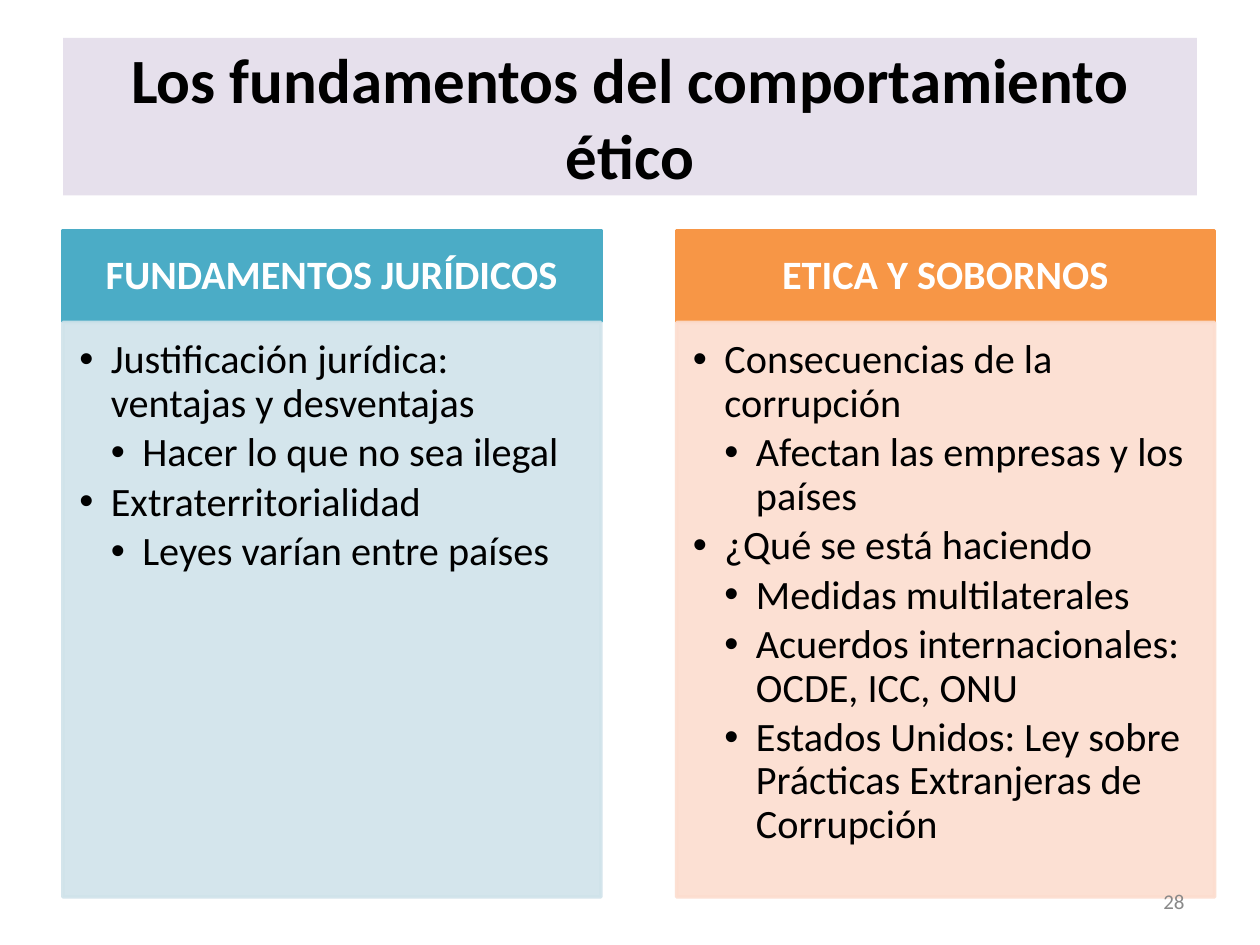
from lxml import etree
from pptx import Presentation
from pptx import util as u
from pptx.dml.color import RGBColor
from pptx.enum import shapes, text
from pptx.oxml.ns import qn

BLACK = RGBColor(0x00, 0x00, 0x00)
WHITE = RGBColor(0xFF, 0xFF, 0xFF)
GREY = RGBColor(0x89, 0x89, 0x89)
LAVENDER = RGBColor(0xE6, 0xE0, 0xEC)
TEAL = RGBColor(0x4B, 0xAC, 0xC6)
PALE_TEAL = RGBColor(0xD0, 0xE3, 0xEA)
ORANGE = RGBColor(0xF7, 0x96, 0x46)
PALE_ORANGE = RGBColor(0xFC, 0xDD, 0xCF)

MARGIN, COLUMN_WIDTH, COLUMN_STEP = 0.5, 4.27, 4.87
HEADER_TOP, HEADER_HEIGHT = 1.83, 0.72
BODY_TOP, BODY_HEIGHT = 2.56, 4.56
INDENT = 0.25

COLUMNS = [
    ("FUNDAMENTOS JURÍDICOS", TEAL, PALE_TEAL, [
        (1, "Justificación jurídica: ventajas y desventajas"),
        (2, "Hacer lo que no sea ilegal"),
        (1, "Extraterritorialidad"),
        (2, "Leyes varían entre países"),
    ]),
    ("ETICA Y SOBORNOS", ORANGE, PALE_ORANGE, [
        (1, "Consecuencias de la corrupción"),
        (2, "Afectan las empresas y los países"),
        (1, "¿Qué se está haciendo"),
        (2, "Medidas multilaterales"),
        (2, "Acuerdos internacionales: OCDE, ICC, ONU"),
        (2, "Estados Unidos: Ley sobre Prácticas Extranjeras de Corrupción"),
    ]),
]


def write(paragraph, words, size, color, bold=False, **layout):
    run = paragraph.add_run()
    run.text = words
    run.font.color.rgb = color
    font_values = {"name": "Calibri", "size": u.Pt(size), "bold": bold}
    for target, values in ((run.font, font_values), (paragraph, layout)):
        for name, value in values.items():
            setattr(target, name, value)


def add_panel(left, top, height, color, opacity, margins, anchor):
    box = (u.Inches(value) for value in (left, top, COLUMN_WIDTH, height))
    shape = slide.shapes.add_shape(shapes.MSO_SHAPE.RECTANGLE, *box)
    shape.shadow.inherit = False
    shape.line.width = u.Pt(2)
    shape.fill.solid()
    for paint in (shape.fill, shape.line.fill):
        paint.solid()
        paint.fore_color.rgb = color
    if opacity < 100:
        for swatch in shape._element.spPr.iter(qn("a:srgbClr")):
            etree.SubElement(swatch, qn("a:alpha"), val=str(opacity * 1000))
    frame = shape.text_frame
    frame.vertical_anchor = anchor
    for side, value in zip(("left", "top", "right", "bottom"), margins):
        setattr(frame, "margin_" + side, u.Inches(value))
    return frame


presentation = Presentation()
presentation.slide_width, presentation.slide_height = u.Inches(10), u.Inches(7.5)
slide = presentation.slides.add_slide(presentation.slide_layouts[5])

title = slide.shapes.title
title_place = {"left": 0.5, "top": 0.3, "width": 9, "height": 1.25}
for name, value in title_place.items():
    setattr(title, name, u.Inches(value))
title.fill.solid()
title.fill.fore_color.rgb = LAVENDER
title_format = {
    "word_wrap": True,
    "auto_size": text.MSO_AUTO_SIZE.NONE,
    "vertical_anchor": text.MSO_ANCHOR.MIDDLE,
}
for name, value in title_format.items():
    setattr(title.text_frame, name, value)
write(title.text_frame.paragraphs[0], "Los fundamentos del comportamiento ético",
      36, BLACK, True, alignment=text.PP_ALIGN.CENTER)

for index, (heading, strong, pale, items) in enumerate(COLUMNS):
    left = MARGIN + index * COLUMN_STEP
    header = add_panel(left, HEADER_TOP, HEADER_HEIGHT, strong, 100,
                       (0.18, 0.1, 0.18, 0.1), text.MSO_ANCHOR.MIDDLE)
    write(header.paragraphs[0], heading, 23, WHITE, True,
          alignment=text.PP_ALIGN.CENTER, line_spacing=0.9)

    body = add_panel(left, BODY_TOP, BODY_HEIGHT, pale, 90,
                     (0.13, 0.13, 0.18, 0.2), text.MSO_ANCHOR.TOP)
    for position, (level, words) in enumerate(items):
        paragraph = body.add_paragraph() if position else body.paragraphs[0]
        write(paragraph, words, 23, BLACK, level=level, line_spacing=0.9,
              space_after=u.Pt(3.45), alignment=text.PP_ALIGN.LEFT)
        properties = paragraph._p.get_or_add_pPr()
        properties.set("marL", str(u.Inches(level * INDENT)))
        properties.set("indent", str(-u.Inches(INDENT)))
        etree.SubElement(properties, qn("a:buFont"), typeface="Arial")
        etree.SubElement(properties, qn("a:buChar"), char="•")

number_box = slide.shapes.add_textbox(
    *(u.Inches(value) for value in (7.17, 6.95, 2.33, 0.4)))
number_box.text_frame.word_wrap = True
number_box.text_frame.vertical_anchor = text.MSO_ANCHOR.MIDDLE
write(number_box.text_frame.paragraphs[0], "28", 12, GREY,
      alignment=text.PP_ALIGN.RIGHT)

presentation.save("out.pptx")
